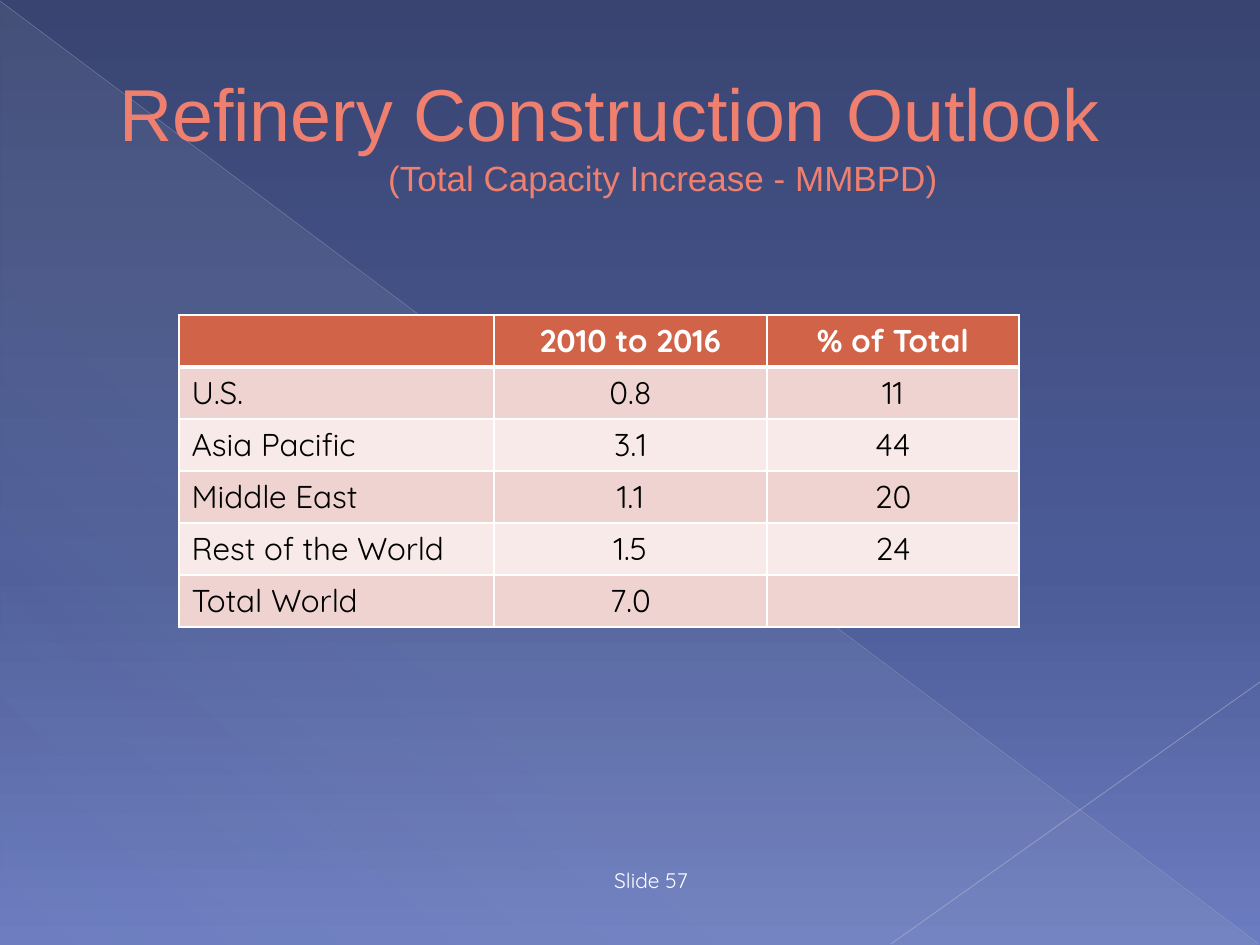
from lxml import etree
from pptx import Presentation
from pptx.dml.color import RGBColor
from pptx.enum.shapes import MSO_CONNECTOR, MSO_SHAPE
from pptx.enum.text import MSO_ANCHOR, PP_ALIGN
from pptx.oxml.ns import qn
from pptx.util import Emu, Pt

LINE = MSO_CONNECTOR.STRAIGHT
TRIANGLE = MSO_SHAPE.RIGHT_TRIANGLE
MIDDLE, BOTTOM = MSO_ANCHOR.MIDDLE, MSO_ANCHOR.BOTTOM
CENTER, LEFT = PP_ALIGN.CENTER, PP_ALIGN.LEFT

WHITE = RGBColor(0xFF, 0xFF, 0xFF)
BLACK = RGBColor(0, 0, 0)
CORAL = RGBColor(0xEF, 0x7F, 0x6E)
RUST = RGBColor(0xD1, 0x63, 0x49)
PINK = RGBColor(0xEE, 0xD3, 0xD0)
PALE = RGBColor(0xF7, 0xEA, 0xE9)
NAVY = RGBColor(0x39, 0x44, 0x71)
BLUE = RGBColor(0x4B, 0x5B, 0x97)
SKY = RGBColor(0x6C, 0x7C, 0xC0)
MIST = RGBColor(0xC5, 0xD1, 0xD7)
EDGE = RGBColor(0xBA, 0xBE, 0xCD)
RAY = RGBColor(0xC2, 0xC5, 0xD2)

ROWS = [
    ("", "2010 to 2016", "% of Total"),
    ("U.S.", "0.8", "11"),
    ("Asia Pacific", "3.1", "44"),
    ("Middle East", "1.1", "20"),
    ("Rest of the World", "1.5", "24"),
    ("Total World", "7.0", ""),
]
COLS = (315, 273, 252)


def px(n):
    return Emu(round(n * 914400 / 126))


def tint(host, color, alpha=100):
    node = etree.SubElement(host, qn("a:srgbClr"), val=str(color))
    if alpha < 100:
        etree.SubElement(node, qn("a:alpha"), val=str(alpha * 1000))


def blend(fill, host, stops, angle):
    """Give a fill a linear gradient of (position, colour, opacity) stops."""
    fill.gradient()
    grad = host.find(".//" + qn("a:gradFill"))
    gs_list = grad.find(qn("a:gsLst"))
    for old in list(gs_list):
        gs_list.remove(old)
    for pos, color, alpha in stops:
        stop = etree.SubElement(gs_list, qn("a:gs"), pos=str(pos * 1000))
        tint(stop, color, alpha)
    grad.find(qn("a:lin")).set("ang", str(angle * 60000))


def add_ray(slide, start, end, color, width, alpha):
    ray = slide.shapes.add_connector(LINE, *map(px, start + end))
    ray.line.width = Pt(width)
    ray.line.color.rgb = color
    node = ray.line.color._xFill.find(qn("a:srgbClr"))
    etree.SubElement(node, qn("a:alpha"), val=str(alpha * 1000))
    etree.SubElement(ray._element.spPr, qn("a:effectLst"))


def add_text(slide, box, anchor):
    frame = slide.shapes.add_textbox(*map(px, box)).text_frame
    frame.word_wrap = True
    frame.vertical_anchor = anchor
    para = frame.paragraphs[0]
    para.alignment = CENTER
    return para


def style(font, name, size, color, bold=False):
    font.name, font.size, font.bold = name, Pt(size), bold
    font.color.rgb = color


def add_back(slide, box):
    x, y, w, h = box
    blend(slide.background.fill, slide.element,
          [(0, NAVY, 100), (60, BLUE, 100), (100, SKY, 100)], 90)
    wedge = slide.shapes.add_shape(TRIANGLE, *map(px, (x + 1, y + 2, w - 2, h - 2)))
    wedge.shadow.inherit = False
    blend(wedge.fill, wedge._element.spPr,
          [(0, MIST, 10), (70, MIST, 8), (100, MIST, 1)], 133)
    wedge.line.fill.background()
    add_ray(slide, (x, y + 1), (x + w - 1, y + h - 1), EDGE, 0.39, 35)
    add_ray(slide, (x + w, y + 682), (x + 891, y + h - 1), RAY, 0.47, 45)


def add_title(slide, box):
    para = add_text(slide, box, MIDDLE)
    # Hanging indent moves the second line to the right
    props = para._p.get_or_add_pPr()
    props.set("marL", str(px(107)))
    props.set("indent", str(-px(107)))
    style(para.font, "Arial", 42, CORAL)
    para.add_run().text = "Refinery Construction Outlook"
    para.add_line_break()
    note = para.add_run()
    note.text = "(Total Capacity Increase - MMBPD)"
    note.font.size = Pt(20)


def add_footer(slide, box):
    para = add_text(slide, box, BOTTOM)
    para.text = "Slide 57"
    style(para.font, "Quicksand", 12, WHITE)


def add_borders(cell, row):
    props = cell._tc.get_or_add_tcPr()
    for side in "LRTB":
        thick = (row, side) in ((0, "B"), (1, "T"))
        line = etree.SubElement(props, qn("a:ln" + side), w=str(Pt(3 if thick else 1)))
        tint(etree.SubElement(line, qn("a:solidFill")), WHITE)


def add_grid(slide, box):
    grid = slide.shapes.add_table(len(ROWS), len(COLS), *map(px, box)).table
    for col, width in zip(grid.columns, COLS):
        col.width = px(width)
    for r, texts in enumerate(ROWS):
        grid.rows[r].height = px(box[3] // len(ROWS))
        head = r == 0
        for c, text in enumerate(texts):
            cell = grid.cell(r, c)
            add_borders(cell, r)
            cell.fill.solid()
            cell.fill.fore_color.rgb = RUST if head else PINK if r % 2 else PALE
            cell.vertical_anchor = MIDDLE
            para = cell.text_frame.paragraphs[0]
            para.text = text
            para.alignment = CENTER if c else LEFT
            style(para.font, "Quicksand", 18, WHITE if head else BLACK, head)


def main():
    deck = Presentation()
    deck.slide_width, deck.slide_height = px(1260), px(945)
    slide = deck.slides.add_slide(deck.slide_layouts[6])
    add_back(slide, (0, 0, 1260, 945))
    add_title(slide, (0, 37, 1219, 193))
    add_footer(slide, (504, 857, 294, 42))
    add_grid(slide, (179, 315, sum(COLS), 312))
    deck.save("out.pptx")


if __name__ == "__main__":
    main()
